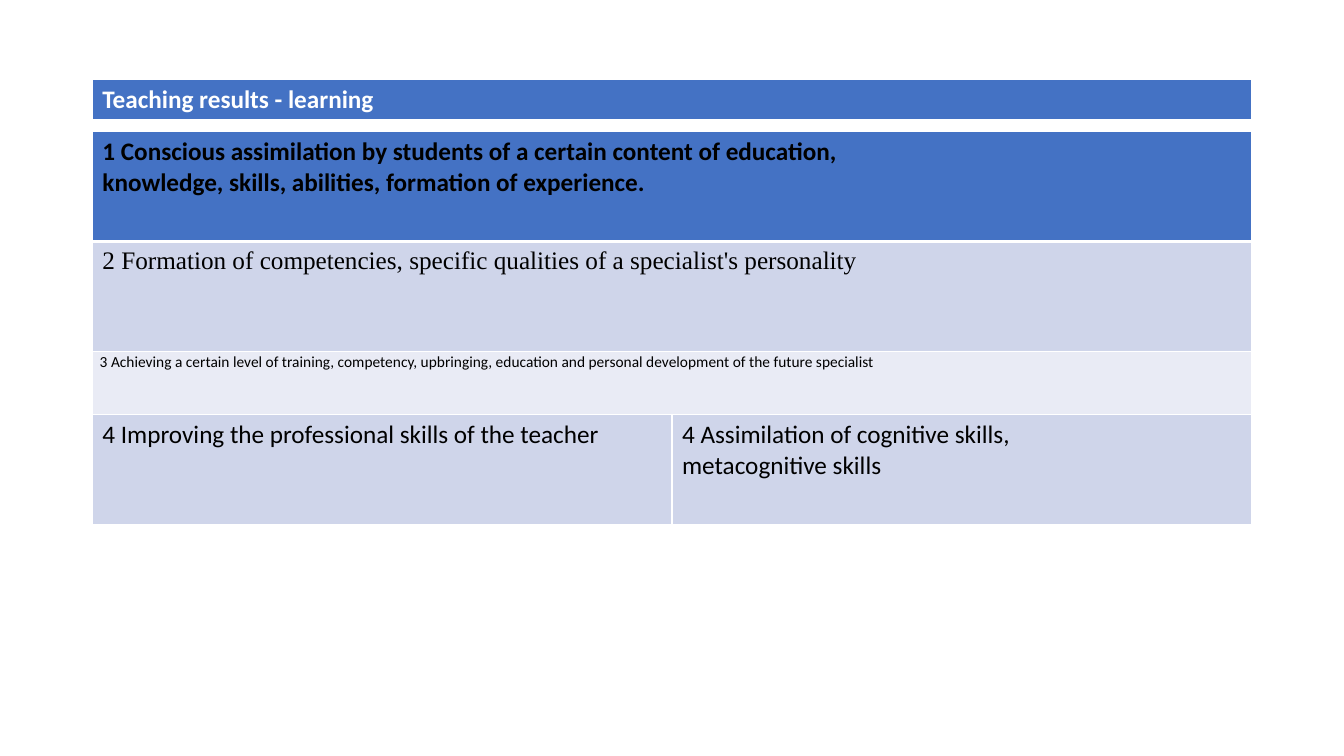
from lxml.etree import SubElement as Sub
from pptx import Presentation
from pptx.dml.color import RGBColor as RGB
from pptx.oxml.ns import qn
from pptx.util import Pt

PX = 9525
BLUE, PALE, LIGHT = "4472C4", "CFD5EA", "E9EBF5"
BLACK, WHITE = "000000", "FFFFFF"
BASE = {"name": "Calibri", "size": Pt(18), "bold": False}
BOLD = {"bold": True}
SERIF = {"name": "Times New Roman"}
SMALL = {"size": Pt(11)}
TIGHT = {"margin_left": 7 * PX, "margin_right": 7 * PX,
         "margin_top": 0, "margin_bottom": 0}
SPACED = {"line_spacing": 1.07, "space_after": Pt(8)}

# Each row: height, fill, text colour, font, cell texts
TITLE = [(39, BLUE, WHITE, BOLD, ["Teaching results - learning"])]
RESULTS = [
    (105, BLUE, BLACK, BOLD, [
        "1 Conscious assimilation by students of a certain content of education,\n"
        "knowledge, skills, abilities, formation of experience."]),
    (105, PALE, BLACK, SERIF, [
        "2 Formation of competencies, specific qualities of a specialist's personality"]),
    (60, LIGHT, BLACK, SMALL, [
        "3 Achieving a certain level of training, competency, upbringing, "
        "education and personal development of the future specialist"]),
    (105, PALE, BLACK, {}, [
        "4 Improving the professional skills of the teacher",
        "4 Assimilation of cognitive skills,\nmetacognitive skills"]),
]


def color(code):
    return RGB.from_string(code)


def assign(item, values):
    for key, value in values.items():
        setattr(item, key, value)


def edge(cell, first):
    """Draw white borders, thicker below the first row."""
    props = cell._tc.get_or_add_tcPr()
    for side in "LRTB":
        width = 3 if first and side == "B" else 1
        line = Sub(props, qn(f"a:ln{side}"), w=str(Pt(width)))
        Sub(Sub(line, qn("a:solidFill")), qn("a:srgbClr"), val=WHITE)


def write(cell, text, ink, font):
    cell.text = text
    small = font is SMALL
    if small:
        assign(cell, TIGHT)
    for para in cell.text_frame.paragraphs:
        if small:
            assign(para, SPACED)
        for run in para.runs:
            assign(run.font, BASE | font)
            run.font.color.rgb = color(ink)


def grid(slide, left, top, width, rows):
    """Build a table whose single-text rows span all columns."""
    count = max(len(row[-1]) for row in rows)
    high = sum(row[0] for row in rows)
    box = [n * PX for n in (left, top, width, high)]
    table = slide.shapes.add_table(len(rows), count, *box).table
    for column in table.columns:
        column.width = width * PX // count
    for i, (height, fill, ink, font, texts) in enumerate(rows):
        table.rows[i].height = height * PX
        cells = list(table.rows[i].cells)
        for cell in cells:
            edge(cell, i == 0)
            cell.fill.solid()
            cell.fill.fore_color.rgb = color(fill)
        if len(texts) < count:
            cells[0].merge(cells[-1])
        for cell, text in zip(cells, texts):
            write(cell, text, ink, font)


def main():
    deck = Presentation()
    deck.slide_width, deck.slide_height = 1280 * PX, 720 * PX
    slide = deck.slides.add_slide(deck.slide_layouts[6])
    grid(slide, 88, 125, 1104, RESULTS)
    grid(slide, 88, 76, 1104, TITLE)
    deck.save("out.pptx")


if __name__ == "__main__":
    main()
